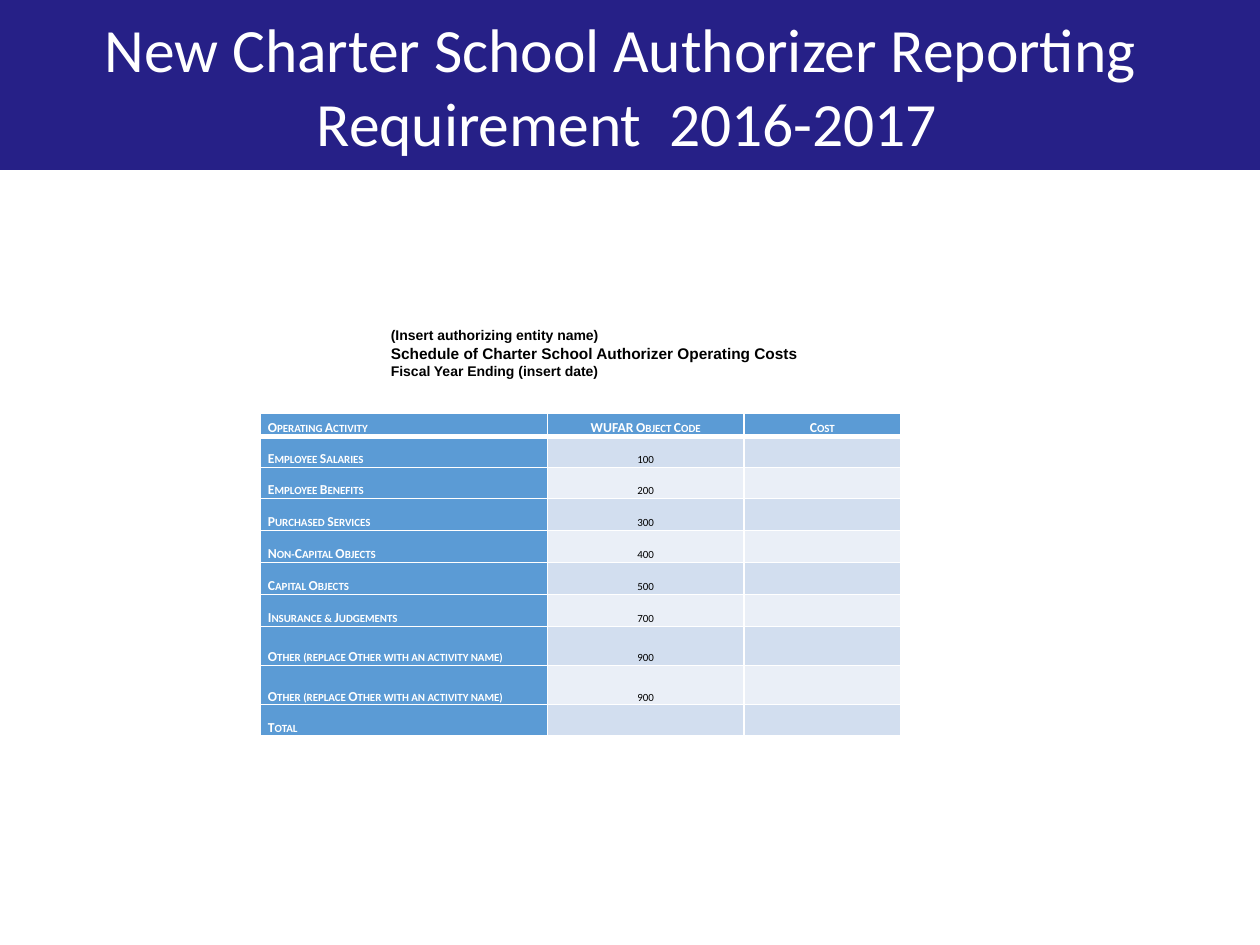
from dataclasses import dataclass

from lxml import etree
from pptx import Presentation
from pptx.dml.color import RGBColor
from pptx.enum.shapes import MSO_SHAPE
from pptx.enum.text import MSO_ANCHOR, MSO_AUTO_SIZE, PP_ALIGN
from pptx.oxml.ns import qn
from pptx.util import Cm, Pt

RECTANGLE = MSO_SHAPE.RECTANGLE
TOP, MIDDLE, BOTTOM = MSO_ANCHOR.TOP, MSO_ANCHOR.MIDDLE, MSO_ANCHOR.BOTTOM
LEFT, CENTER = PP_ALIGN.LEFT, PP_ALIGN.CENTER
NO_AUTOFIT = MSO_AUTO_SIZE.NONE
TITLE_ONLY = 5

# Content
TITLE_LINES = ["New Charter School Authorizer Reporting ", "Requirement  2016-2017"]
SCHEDULE_LINES = [
    ("(Insert authorizing entity name)", 8.2),
    ("Schedule of Charter School Authorizer Operating Costs", 9),
    ("Fiscal Year Ending (insert date)", 8.2),
]
OTHER = "Other (replace Other with an activity name)"
COST_ROWS = [  # row height in cm, then the cells
    (0.48, ("Operating Activity", "WUFAR Object Code", "Cost")),
    (0.64, ("Employee Salaries", "100", "")),
    (0.64, ("Employee Benefits", "200", "")),
    (0.66, ("Purchased Services", "300", "")),
    (0.66, ("Non-Capital Objects", "400", "")),
    (0.66, ("Capital Objects", "500", "")),
    (0.66, ("Insurance & Judgements", "700", "")),
    (0.81, (OTHER, "900", "")),
    (0.81, (OTHER, "900", "")),
    (0.64, ("Total", "", "")),
]
COLUMN_WIDTHS = (5.92, 4.06, 3.23)
SLIDE_WIDTH, SLIDE_HEIGHT, BAND_HEIGHT = 26.01, 19.51, 3.51


@dataclass(frozen=True)
class Theme:
    band: str = "262087"
    header: str = "5B9BD5"
    stripes: tuple = ("EAEFF7", "D2DEEF")
    white: str = "FFFFFF"
    black: str = "000000"
    title_size: float = 36
    table_size: float = 8
    title_font: str = "Calibri"
    schedule_font: str = "Arial"


THEME = Theme()


def add_run(paragraph, text, font_name, size, color, bold=False):
    run = paragraph.add_run()
    run.text = text
    run.font.name, run.font.size, run.font.bold = font_name, Pt(size), bold
    run.font.color.rgb = RGBColor.from_string(color)
    return run


def set_borders(cell, top, bottom):
    properties = cell._tc.get_or_add_tcPr()
    for side, width in (("L", 1), ("R", 1), ("T", top), ("B", bottom)):
        line = etree.SubElement(properties, qn(f"a:ln{side}"), w=str(Pt(width)))
        fill = etree.SubElement(line, qn("a:solidFill"))
        etree.SubElement(fill, qn("a:srgbClr"), val=THEME.white)


def fill_cell(cell, text, row, column):
    is_header = row == 0 or column == 0
    set_borders(cell, 3 if row == 1 else 1, 3 if row == 0 else 1)
    cell.fill.solid()
    color = THEME.header if is_header else THEME.stripes[row % 2]
    cell.fill.fore_color.rgb = RGBColor.from_string(color)
    cell.vertical_anchor = BOTTOM
    cell.margin_left = cell.margin_right = Cm(0.15)
    cell.margin_top = cell.margin_bottom = 0
    paragraph = cell.text_frame.paragraphs[0]
    paragraph.alignment = CENTER if column else LEFT
    if text:
        run = add_run(paragraph, text, THEME.title_font, THEME.table_size,
                      THEME.white if is_header else THEME.black, is_header)
        run.font._element.set("cap", "small")
    else:  # keeps an empty cell from stretching its row
        etree.SubElement(paragraph._p, qn("a:endParaRPr"), sz=str(int(THEME.table_size * 100)))


def add_title(slide):
    band = slide.shapes.add_shape(RECTANGLE, 0, 0, Cm(SLIDE_WIDTH), Cm(BAND_HEIGHT))
    band.shadow.inherit = False
    band.fill.solid()
    band.fill.fore_color.rgb = RGBColor.from_string(THEME.band)
    band.line.fill.background()
    slide.shapes._spTree.insert(2, band._element)  # behind the title

    title = slide.shapes.title
    title.left, title.top, title.width, title.height = Cm(1.52), 0, Cm(22.86), Cm(BAND_HEIGHT)
    frame = title.text_frame
    frame.auto_size, frame.word_wrap, frame.vertical_anchor = NO_AUTOFIT, True, MIDDLE
    paragraph = frame.paragraphs[0]
    paragraph.alignment = CENTER
    for index, text in enumerate(TITLE_LINES):
        if index:
            paragraph.add_line_break()
        add_run(paragraph, text, THEME.title_font, THEME.title_size, THEME.white)


def add_schedule_heading(slide):
    box = slide.shapes.add_textbox(Cm(7.87), Cm(6.65), Cm(17.8), Cm(1.85))
    frame = box.text_frame
    frame.word_wrap, frame.vertical_anchor = True, TOP
    frame.margin_left = frame.margin_right = Cm(0.2)
    frame.margin_top = frame.margin_bottom = Cm(0.1)
    for index, (text, size) in enumerate(SCHEDULE_LINES):
        paragraph = frame.add_paragraph() if index else frame.paragraphs[0]
        add_run(paragraph, text, THEME.schedule_font, size, THEME.black, True)


def add_cost_table(slide):
    height = sum(row_height for row_height, _ in COST_ROWS)
    table = slide.shapes.add_table(len(COST_ROWS), len(COLUMN_WIDTHS), Cm(5.38), Cm(8.53),
                                   Cm(sum(COLUMN_WIDTHS)), Cm(height)).table
    table.first_col = True
    for column, width in enumerate(COLUMN_WIDTHS):
        table.columns[column].width = Cm(width)
    for row, (row_height, texts) in enumerate(COST_ROWS):
        table.rows[row].height = Cm(row_height)
        for column, text in enumerate(texts):
            fill_cell(table.cell(row, column), text, row, column)


def main():
    presentation = Presentation()
    presentation.slide_width, presentation.slide_height = Cm(SLIDE_WIDTH), Cm(SLIDE_HEIGHT)
    slide = presentation.slides.add_slide(presentation.slide_layouts[TITLE_ONLY])
    add_title(slide)
    add_schedule_heading(slide)
    add_cost_table(slide)
    presentation.save("out.pptx")


if __name__ == "__main__":
    main()
